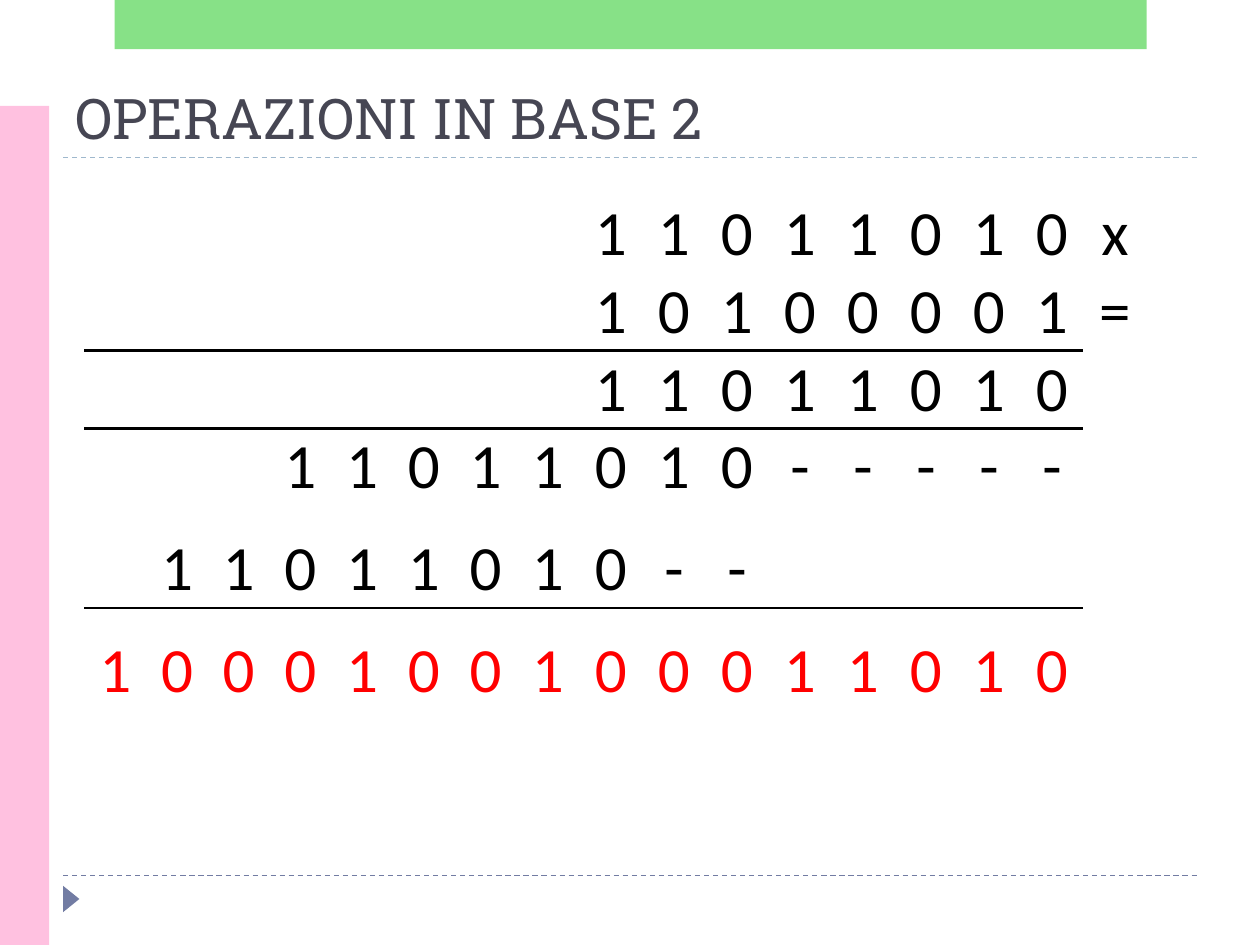
from lxml import etree
from pptx import Presentation
from pptx.dml.color import RGBColor
from pptx.enum.dml import MSO_LINE
from pptx.enum.shapes import MSO_CONNECTOR, MSO_SHAPE
from pptx.enum.text import MSO_ANCHOR, PP_ALIGN
from pptx.oxml import parse_xml
from pptx.oxml.ns import nsdecls, qn
from pptx.util import Inches, Pt

COLORS = {
    "title": "464653", "digit": "000000", "result": "FF0000",
    "footer": "727CA3", "rule": "9FB8CD", "pink": "FFC1E0", "green": "62D862",
}


def rgb(name):
    return RGBColor.from_string(COLORS[name])


def add_border(cell, side):
    ln = parse_xml(
        f'<a:{side} {nsdecls("a")} w="19050"><a:solidFill>'
        f'<a:srgbClr val="{COLORS["digit"]}"/></a:solidFill></a:{side}>')
    cell._tc.get_or_add_tcPr().insert(0, ln)


prs = Presentation()
prs.slide_width, prs.slide_height = Inches(10), Inches(7.5)
s = prs.slides.add_slide(prs.slide_layouts[5])

for y, color in [(6.95, "footer"), (1.25, "rule")]:
    line = s.shapes.add_connector(
        MSO_CONNECTOR.STRAIGHT, Inches(0.5), Inches(y), Inches(9.5), Inches(y))
    line.line.color.rgb = rgb(color)
    line.line.width = Pt(0.75)
    line.line.dash_style = MSO_LINE.DASH
    etree.SubElement(line._element.spPr, qn("a:effectLst"))

for kind, x, y, w, h, color, angle in [
    (MSO_SHAPE.ISOSCELES_TRIANGLE, 0.46, 7.07, 0.21, 0.13, "footer", 90),
    (MSO_SHAPE.RECTANGLE, 0, 0.84, 0.39, 6.66, "pink", 0),
    (MSO_SHAPE.RECTANGLE, 0.91, 0, 8.19, 0.39, "green", 0),
]:
    sp = s.shapes.add_shape(kind, Inches(x), Inches(y), Inches(w), Inches(h))
    sp.rotation = angle
    sp.shadow.inherit = False
    sp.fill.solid()
    sp.fill.fore_color.rgb = rgb(color)
    sp.line.fill.background()
    if color == "green":
        clr = sp._element.spPr.find(qn("a:solidFill")).find(qn("a:srgbClr"))
        etree.SubElement(clr, qn("a:alpha"), val="76000")

title = s.shapes.title
title.left, title.top = Inches(0.5), Inches(0.55)
title.width, title.height = Inches(9), Inches(0.7)
tf = title.text_frame
tf.text = "OPERAZIONI IN BASE 2"
tf.vertical_anchor = MSO_ANCHOR.BOTTOM
p = tf.paragraphs[0]
p.alignment = PP_ALIGN.LEFT
p.font.size = Pt(32)
p.font.name = "Roboto Slab"
p.font.color.rgb = rgb("title")

rows = [
    (8, "11011010x", 0.61, None),
    (8, "10100001=", 0.62, "lnB"),
    (8, "11011010", 0.62, "lnT"),
    (3, "11011010-----", 0.61, None),
    (1, "11011010--", 0.81, "lnB"),
    (0, "1000100100011010", 0.81, "lnT"),
]
frame = s.shapes.add_table(
    len(rows), 17, Inches(0.67), Inches(1.55), Inches(8.5), Inches(4.08))
table = frame.table
table.first_row = table.horz_banding = False
table._tbl.tblPr.find(qn("a:tableStyleId")).text = "{2D5ABB26-0587-4C30-8999-92F81FD0307C}"
for i, col in enumerate(table.columns):
    col.width = Inches(0.49 if i < 7 else 0.5)

for i, (start, digits, height, side) in enumerate(rows):
    table.rows[i].height = Inches(height)
    for j in range(17):
        cell = table.cell(i, j)
        cell.fill.background()
        cell.margin_left = cell.margin_right = 0
        cell.margin_top = cell.margin_bottom = 0
        cell.vertical_anchor = MSO_ANCHOR.BOTTOM
        if side and j < 16:
            add_border(cell, side)
        if start <= j < start + len(digits):
            cell.text = digits[j - start]
            p = cell.text_frame.paragraphs[0]
            p.alignment = PP_ALIGN.CENTER
            p.font.size = Pt(36)
            p.font.name = "Calibri"
            p.font.color.rgb = rgb("result" if i == 5 else "digit")

prs.save("out.pptx")
